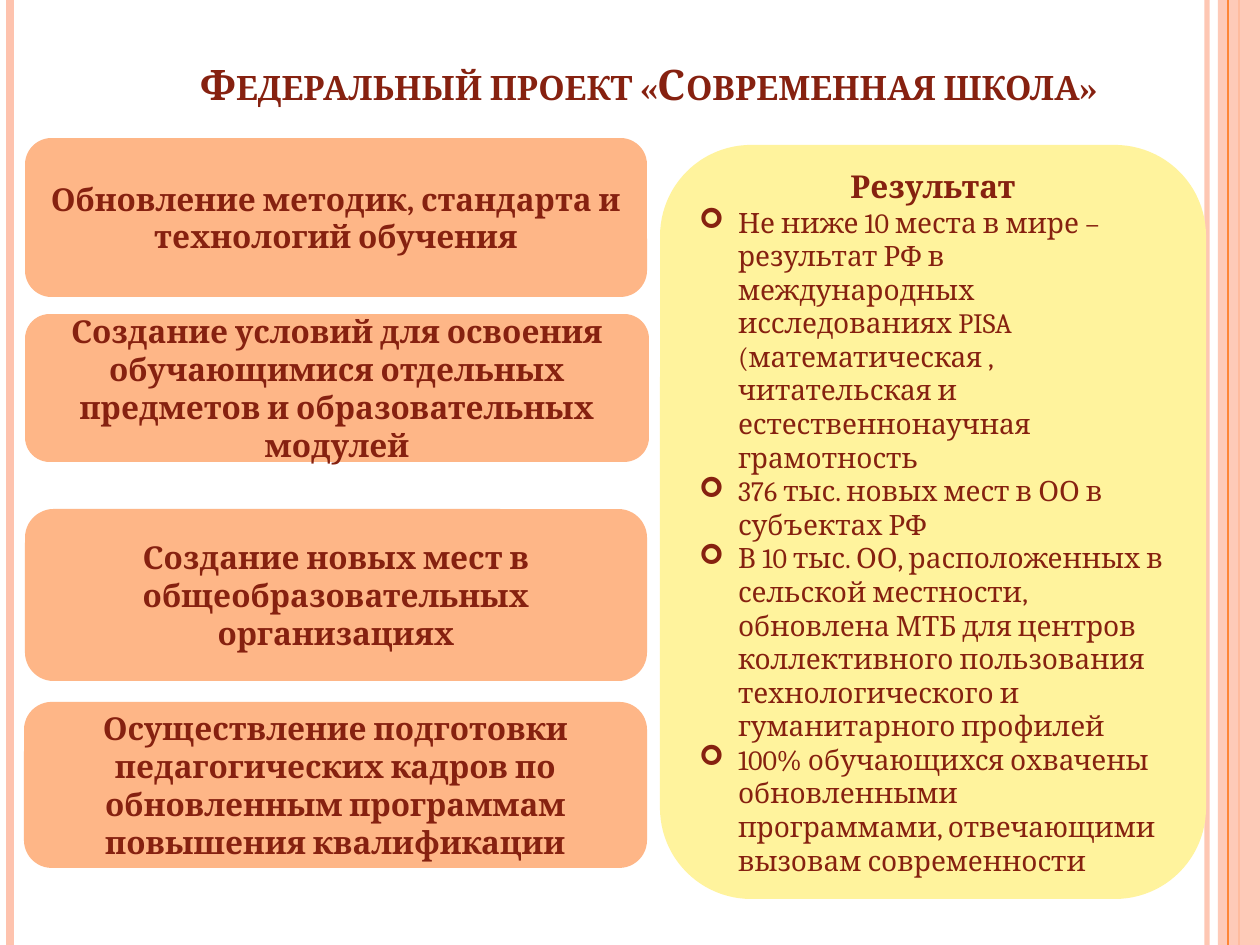
import dataclasses
import typing

import lxml.etree
import pptx
import pptx.dml.color
import pptx.enum.shapes
import pptx.enum.text
import pptx.oxml.ns
import pptx.util

EMU_PER_PX = 914400 / 126
SLIDE_W, SLIDE_H = 1260, 945
ALIGN = pptx.enum.text.PP_ALIGN
ANCHOR = pptx.enum.text.MSO_ANCHOR
qn = pptx.oxml.ns.qn


@dataclasses.dataclass(frozen=True)
class Theme:
    font: str = "Cambria"
    text: str = "862110"
    pink: str = "FEC3AE"
    orange: str = "FE8637"
    card: str = "FEB687"
    result: str = "FFF39D"
    title_size: int = 24
    head_size: int = 18
    body_size: int = 16


class Rule(typing.NamedTuple):
    x: int
    color: str
    width: float
    opacity: int = 100


class Card(typing.NamedTuple):
    x: int
    y: int
    w: int
    h: int
    text: str


THEME = Theme()

RULES = [
    Rule(1207, THEME.pink, 3, 93),
    Rule(10, THEME.pink, 4.5),
    Rule(1239, THEME.orange, 1.5),
]
STRIP_RULE = Rule(1228, THEME.orange, 0.75)

CARDS = [
    Card(25, 138, 622, 159, "Обновление методик, стандарта и технологий обучения"),
    Card(25, 314, 624, 148, "Создание условий для освоения обучающимися отдельных "
                            "предметов и образовательных модулей"),
    Card(25, 509, 622, 172, "Создание новых мест в общеобразовательных организациях"),
    Card(24, 702, 623, 166, "Осуществление подготовки педагогических кадров по "
                            "обновленным программам повышения квалификации"),
]

RESULTS = [
    "Не ниже 10 места в мире – результат РФ в международных исследованиях PISA "
    "(математическая , читательская и естественнонаучная грамотность",
    "376 тыс. новых мест в ОО в субъектах РФ",
    "В 10 тыс. ОО, расположенных в сельской местности, обновлена МТБ для центров "
    "коллективного пользования технологического и гуманитарного профилей",
    "100% обучающихся охвачены обновленными программами, отвечающими вызовам "
    "современности",
]


def px(n: int) -> int:
    return round(n * EMU_PER_PX)


def rgb(color: str) -> pptx.dml.color.RGBColor:
    return pptx.dml.color.RGBColor.from_string(color)


def set_opacity(fill, percent: int) -> None:
    """Add transparency to the solid colour found below an element."""
    clr = next(fill.iter(qn("a:srgbClr")))
    lxml.etree.SubElement(clr, qn("a:alpha")).set("val", str(percent * 1000))


def add_rule(s, rule: Rule) -> None:
    """Draw a vertical line over the full height of the slide."""
    line = s.shapes.add_connector(pptx.enum.shapes.MSO_CONNECTOR.STRAIGHT,
                                  px(rule.x), 0, px(rule.x), px(SLIDE_H))
    line.line.color.rgb = rgb(rule.color)
    line.line.width = pptx.util.Pt(rule.width)
    sp_pr = line._element.spPr
    if rule.opacity < 100:
        set_opacity(sp_pr, rule.opacity)
    lxml.etree.SubElement(sp_pr, qn("a:effectLst"))


def add_box(s, kind, x: int, y: int, w: int, h: int, color: str):
    sp = s.shapes.add_shape(kind, px(x), px(y), px(w), px(h))
    sp.shadow.inherit = False
    sp.fill.solid()
    sp.fill.fore_color.rgb = rgb(color)
    sp.line.fill.background()
    sp.text_frame.word_wrap = True
    sp.text_frame.vertical_anchor = ANCHOR.MIDDLE
    return sp


def put_text(p, text: str, *, size: int = THEME.head_size, bold: bool = True,
             align=ALIGN.CENTER, small_caps: bool = False, bullet: str = "",
             indent: int = 0) -> None:
    """Write one formatted paragraph."""
    p.alignment = align
    r = p.add_run()
    r.text = text
    r.font.name = THEME.font
    r.font.size = pptx.util.Pt(size)
    r.font.bold = bold
    r.font.color.rgb = rgb(THEME.text)
    if small_caps:
        r.font._element.set("cap", "small")
    if bullet:
        p_pr = p._p.get_or_add_pPr()
        p_pr.set("marL", str(px(indent)))
        p_pr.set("indent", str(-px(indent)))
        lxml.etree.SubElement(p_pr, qn("a:buFont")).set("typeface", "Wingdings")
        lxml.etree.SubElement(p_pr, qn("a:buChar")).set("char", bullet)


def main() -> None:
    prs = pptx.Presentation()
    prs.slide_width, prs.slide_height = px(SLIDE_W), px(SLIDE_H)
    s = prs.slides.add_slide(prs.slide_layouts[5])
    shapes = pptx.enum.shapes.MSO_SHAPE

    # Edge decoration
    for rule in RULES:
        add_rule(s, rule)
    strip = add_box(s, shapes.RECTANGLE, 1218, 0, 42, SLIDE_H, THEME.pink)
    set_opacity(strip._element.spPr, 87)
    add_rule(s, STRIP_RULE)

    # Title
    title = s.shapes.title
    title.left, title.top, title.width, title.height = map(px, (63, 38, 1172, 77))
    tf = title.text_frame
    tf.word_wrap = True
    tf.auto_size = pptx.enum.text.MSO_AUTO_SIZE.NONE
    tf.vertical_anchor = ANCHOR.BOTTOM
    put_text(tf.paragraphs[0], "Федеральный проект «Современная школа»",
             size=THEME.title_size, small_caps=True)

    # Tasks on the left
    for card in CARDS:
        sp = add_box(s, shapes.ROUNDED_RECTANGLE, card.x, card.y, card.w, card.h,
                     THEME.card)
        put_text(sp.text_frame.paragraphs[0], card.text)

    # Results on the right
    tf = add_box(s, shapes.ROUNDED_RECTANGLE, 660, 145, 546, 754,
                 THEME.result).text_frame
    put_text(tf.paragraphs[0], "Результат")
    for text in RESULTS:
        put_text(tf.add_paragraph(), text, size=THEME.body_size, bold=False,
                 align=ALIGN.LEFT, bullet="➢", indent=39)

    prs.save("out.pptx")


if __name__ == "__main__":
    main()
